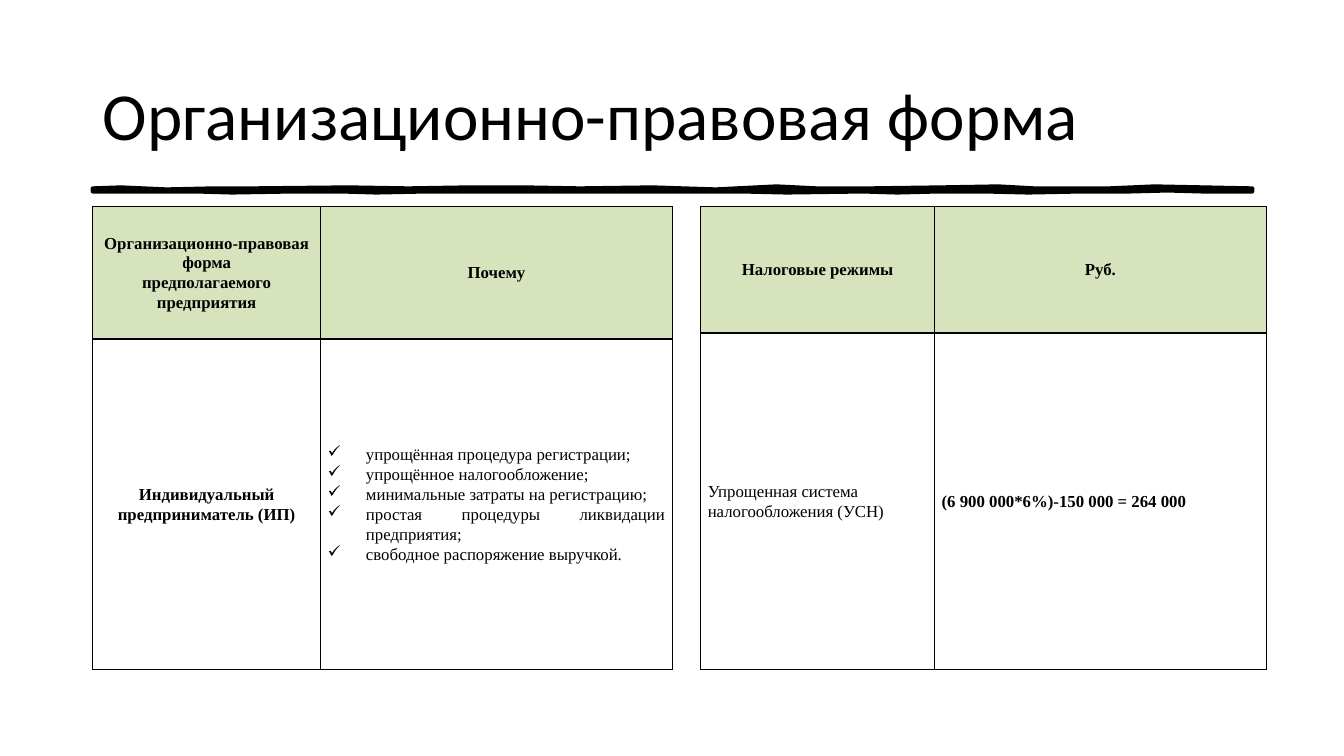
import lxml.etree
import pptx
import pptx.dml.color
import pptx.enum.text
import pptx.oxml.ns
import pptx.util

Inches = pptx.util.Inches
Pt = pptx.util.Pt
ALIGN = pptx.enum.text.PP_ALIGN
MIDDLE = pptx.enum.text.MSO_ANCHOR.MIDDLE
qn = pptx.oxml.ns.qn

BLACK = "000000"
HEADER_GREEN = "D6E3BC"
LEFT = 0.92
TABLE_TOP = 2.05

RULE_TOP = [
    (0.92, 1.87), (1.2, 1.86), (1.65, 1.88), (2.12, 1.87), (2.5, 1.87),
    (3.45, 1.86), (4.05, 1.87), (4.65, 1.86), (5.2, 1.86), (5.75, 1.87),
    (6.47, 1.86), (7.1, 1.88), (7.7, 1.85), (8.1, 1.87), (8.62, 1.87),
    (9.34, 1.86), (9.9, 1.85), (10.26, 1.87), (11.0, 1.87), (11.45, 1.85),
    (12.42, 1.87),
]
RULE_BOTTOM = [
    (12.42, 1.9), (11.93, 1.9), (11.58, 1.89), (11.2, 1.9), (10.72, 1.9),
    (10.2, 1.91), (9.77, 1.9), (9.3, 1.9), (8.9, 1.91), (8.56, 1.9),
    (7.8, 1.91), (7.36, 1.9), (6.75, 1.9), (6.38, 1.9), (5.92, 1.9),
    (5.2, 1.9), (4.22, 1.9), (3.73, 1.91), (3.39, 1.9), (2.9, 1.9),
    (2.3, 1.91), (1.95, 1.9), (1.4, 1.9), (0.92, 1.9),
]


def color(value):
    return pptx.dml.color.RGBColor.from_string(value)


def add_check_bullet(paragraph):
    properties = paragraph._p.get_or_add_pPr()
    properties.set("marL", str(Inches(0.38)))
    properties.set("indent", str(-Inches(0.38)))
    bullet = lxml.etree.SubElement(properties, qn("a:buChar"))
    bullet.set("char", "✓")


def write(frame, lines, size=12, font="Times New Roman", bold=False,
          align=ALIGN.LEFT, spacing=None, checks=False):
    frame.word_wrap = True
    frame.vertical_anchor = MIDDLE
    for number, line in enumerate(lines):
        paragraph = frame.add_paragraph() if number else frame.paragraphs[0]
        paragraph.alignment = align
        if spacing:
            paragraph.line_spacing = spacing
        if checks:
            add_check_bullet(paragraph)
        run = paragraph.add_run()
        run.text = line
        run.font.size = Pt(size)
        run.font.name = font
        run.font.bold = bold
        run.font.color.rgb = color(BLACK)


def set_borders(cell, top, bottom):
    properties = cell._tc.get_or_add_tcPr()
    widths = {"a:lnL": 1, "a:lnR": 1, "a:lnT": top, "a:lnB": bottom}
    for position, (side, width) in enumerate(widths.items()):
        border = lxml.etree.Element(qn(side), w=str(Pt(width)))
        fill = lxml.etree.SubElement(border, qn("a:solidFill"))
        lxml.etree.SubElement(fill, qn("a:srgbClr"), val=BLACK)
        properties.insert(position, border)


def add_bordered_table(slide, left, column_widths, row_heights, headers, body):
    table = slide.shapes.add_table(
        2, 2, Inches(left), Inches(TABLE_TOP),
        Inches(sum(column_widths)), Inches(sum(row_heights))).table
    table.first_row = False
    table.horz_banding = False
    for column, width in zip(table.columns, column_widths):
        column.width = Inches(width)
    for row, height in zip(table.rows, row_heights):
        row.height = Inches(height)
    header_cells = [(lines, dict(bold=True, align=ALIGN.CENTER)) for lines in headers]
    for row, contents in enumerate((header_cells, body)):
        for column, (lines, style) in enumerate(contents):
            cell = table.cell(row, column)
            cell.margin_left = cell.margin_right = Inches(0.07)
            cell.margin_top = cell.margin_bottom = 0
            cell.vertical_anchor = MIDDLE
            if row == 0:
                cell.fill.solid()
                cell.fill.fore_color.rgb = color(HEADER_GREEN)
                set_borders(cell, 1, 1.5)
            else:
                cell.fill.background()
                set_borders(cell, 1.5, 1)
            write(cell.text_frame, lines, spacing=1.07, **style)


def add_brush_rule(slide):
    start, *rest = [(Inches(x), Inches(y)) for x, y in RULE_TOP + RULE_BOTTOM]
    builder = slide.shapes.build_freeform(*start)
    builder.add_line_segments(rest, close=True)
    rule = builder.convert_to_shape()
    rule.shadow.inherit = False
    rule.fill.solid()
    rule.fill.fore_color.rgb = color(BLACK)
    rule.line.color.rgb = color(BLACK)
    rule.line.width = Pt(3)


def add_title(slide, text):
    title = slide.shapes.title
    title.left, title.top = Inches(LEFT), Inches(0.4)
    title.width, title.height = Inches(11.5), Inches(1.45)
    write(title.text_frame, [text], size=48, font="Calibri")


def main():
    deck = pptx.Presentation()
    deck.slide_width = Inches(13.33)
    deck.slide_height = Inches(7.5)
    slide = deck.slides.add_slide(deck.slide_layouts[5])
    add_brush_rule(slide)
    add_title(slide, "Организационно-правовая форма")
    reasons = [
        "упрощённая процедура регистрации;",
        "упрощённое налогообложение;",
        "минимальные затраты на регистрацию;",
        "простая процедуры ликвидации предприятия;",
        "свободное распоряжение выручкой.",
    ]
    add_bordered_table(
        slide, LEFT, (2.26, 3.49), (1.31, 3.28),
        (["Организационно-правовая форма", "предполагаемого предприятия"], ["Почему"]),
        ((["Индивидуальный предприниматель (ИП)"], dict(bold=True, align=ALIGN.CENTER)),
         (reasons, dict(align=ALIGN.JUSTIFY, checks=True))))
    add_bordered_table(
        slide, 6.95, (2.32, 3.29), (1.25, 3.34),
        (["Налоговые режимы"], ["Руб."]),
        ((["Упрощенная система налогообложения (УСН)"], {}),
         (["(6 900 000*6%)-150 000 = 264 000"], dict(bold=True))))
    deck.save("out.pptx")


if __name__ == "__main__":
    main()
